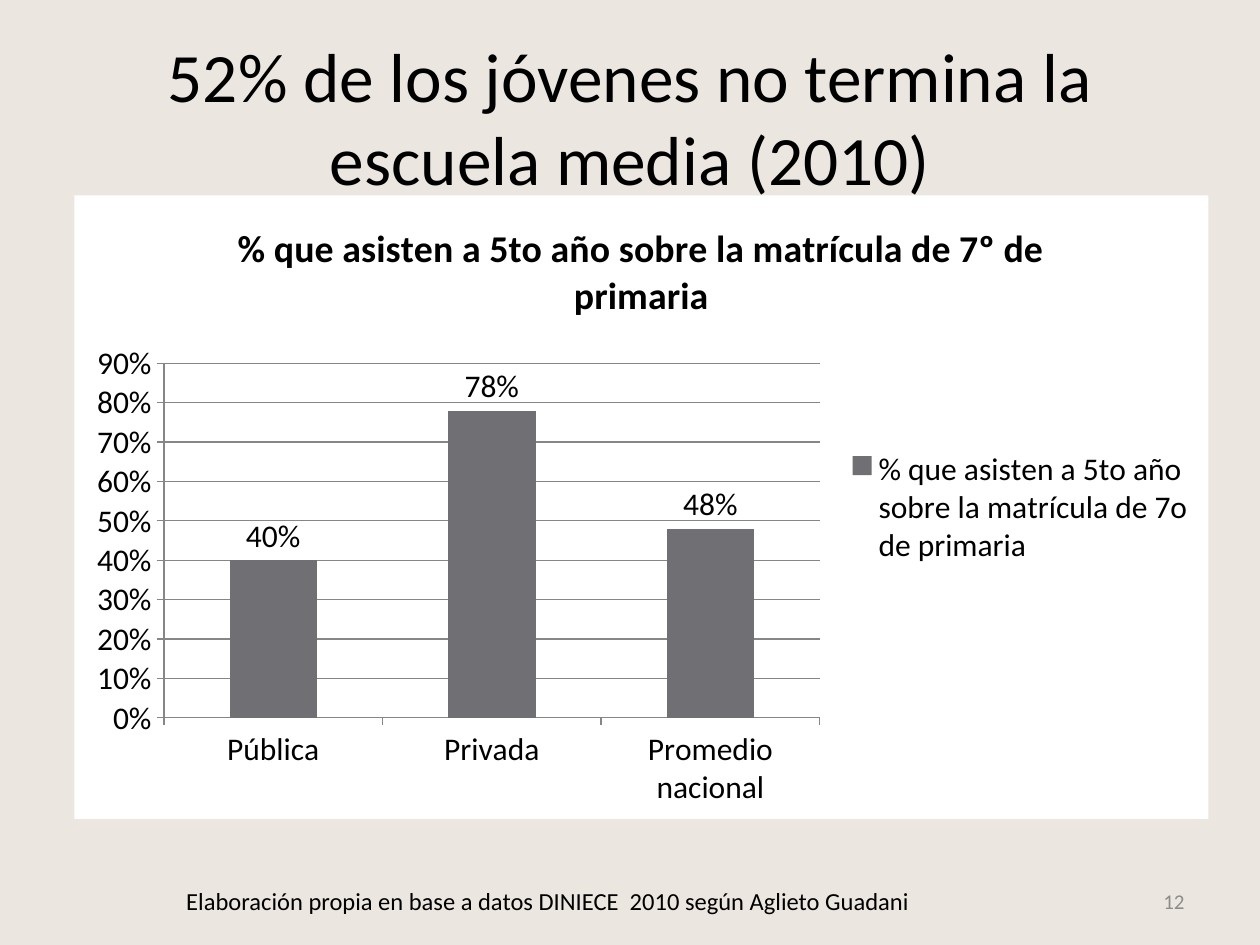
from lxml import etree
from pptx import Presentation
from pptx.chart.data import CategoryChartData
from pptx.dml.color import RGBColor
from pptx.enum import chart as ch, text
from pptx.oxml.ns import qn
from pptx.util import Inches, Pt

BACKGROUND = RGBColor(0xEB, 0xE6, 0xE0)
WHITE = RGBColor(0xFF, 0xFF, 0xFF)
BLACK = RGBColor(0, 0, 0)
BAR_GRAY = RGBColor(0x6F, 0x6F, 0x74)
LINE_GRAY = RGBColor(0x86, 0x86, 0x86)
NUMBER_GRAY = RGBColor(0x8C, 0x8C, 0x8C)
ATTENDANCE = {"Pública": 0.4, "Privada": 0.78, "Promedio nacional": 0.48}


def set_all(target, **values):
    for name, value in values.items():
        setattr(target, name, value)


def set_font(font, size, color=BLACK, bold=False):
    set_all(font, name="Calibri", size=Pt(size), bold=bold)
    font.color.rgb = color


def place(shape, left, top, width, height):
    set_all(shape, left=Inches(left), top=Inches(top),
            width=Inches(width), height=Inches(height))


def write(shape, wording, size, color, align, anchor):
    frame = shape.text_frame
    set_all(frame, text=wording, word_wrap=True, vertical_anchor=anchor)
    paragraph = frame.paragraphs[0]
    paragraph.alignment = align
    set_font(paragraph.runs[0].font, size, color)


def add_title(slide, wording):
    title = slide.shapes.title
    place(title, 0.5, 0.3, 9, 1.25)
    write(title, wording, 39.6, BLACK, text.PP_ALIGN.CENTER, text.MSO_ANCHOR.MIDDLE)


def add_note(slide, box, wording, size, color, align, anchor):
    note = slide.shapes.add_textbox(*map(Inches, box))
    write(note, wording, size, color, align, anchor)


def fill_chart_area(chart, color):
    """Give the whole chart a solid fill and no border."""
    area = etree.Element(qn("c:spPr"))
    fill = etree.SubElement(area, qn("a:solidFill"))
    etree.SubElement(fill, qn("a:srgbClr"), val=str(color))
    border = etree.SubElement(area, qn("a:ln"))
    etree.SubElement(border, qn("a:noFill"))
    chart.element.find(qn("c:chart")).addnext(area)


def format_axes(chart):
    for axis in (chart.category_axis, chart.value_axis):
        axis.major_tick_mark = ch.XL_TICK_MARK.OUTSIDE
        axis.format.line.color.rgb = LINE_GRAY
    values = chart.value_axis
    set_all(values, minimum_scale=0, maximum_scale=0.9, major_unit=0.1,
            has_major_gridlines=True)
    values.major_gridlines.format.line.color.rgb = LINE_GRAY
    set_all(values.tick_labels, number_format="0%", number_format_is_linked=False)


def add_attendance_chart(slide):
    data = CategoryChartData(number_format="0%")
    data.categories = list(ATTENDANCE)
    data.add_series("% que asisten a 5to año sobre la matrícula de 7o de primaria",
                    list(ATTENDANCE.values()))
    chart = slide.shapes.add_chart(
        ch.XL_CHART_TYPE.COLUMN_CLUSTERED,
        *map(Inches, (0.59, 1.55, 9, 4.95)), data).chart
    set_font(chart.font, 18)
    fill_chart_area(chart, WHITE)

    set_all(chart, has_title=True, has_legend=True)
    heading = chart.chart_title.text_frame
    heading.text = "% que asisten a 5to año sobre la matrícula de 7º de primaria"
    set_font(heading.paragraphs[0].runs[0].font, 21.6, bold=True)
    set_all(chart.legend, position=ch.XL_LEGEND_POSITION.RIGHT, include_in_layout=False)
    format_axes(chart)

    bars = chart.plots[0]
    set_all(bars, gap_width=150, vary_by_categories=False, has_data_labels=True)
    set_all(bars.data_labels, show_value=True, number_format="0%",
            number_format_is_linked=False,
            position=ch.XL_LABEL_POSITION.OUTSIDE_END)
    fill = bars.series[0].format.fill
    fill.solid()
    fill.fore_color.rgb = BAR_GRAY


def main():
    deck = Presentation()
    set_all(deck, slide_width=Inches(10), slide_height=Inches(7.5))
    slide = deck.slides.add_slide(deck.slide_layouts[5])
    slide.background.fill.solid()
    slide.background.fill.fore_color.rgb = BACKGROUND

    add_title(slide, "52% de los jóvenes no termina la escuela media (2010)")
    add_attendance_chart(slide)
    add_note(slide, (7.17, 6.95, 2.33, 0.4), "12", 12, NUMBER_GRAY,
             text.PP_ALIGN.RIGHT, text.MSO_ANCHOR.MIDDLE)
    add_note(slide, (1.38, 6.98, 7.8, 0.34),
             "Elaboración propia en base a datos DINIECE  2010 según Aglieto Guadani",
             14, BLACK, text.PP_ALIGN.LEFT, text.MSO_ANCHOR.TOP)
    deck.save("out.pptx")


if __name__ == "__main__":
    main()
